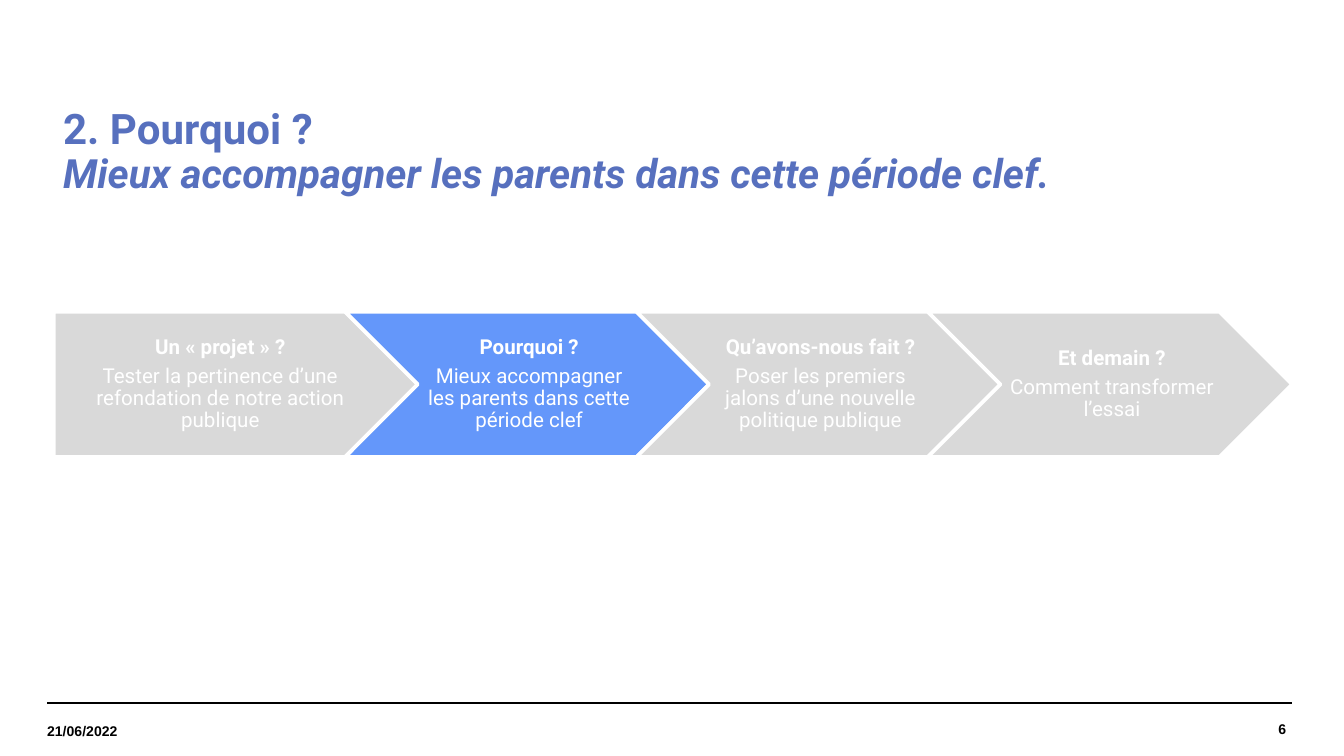
from pptx import Presentation
from pptx.util import Inches, Pt
from pptx.dml.color import RGBColor
from pptx.enum.shapes import MSO_SHAPE, MSO_CONNECTOR
from pptx.enum.text import PP_ALIGN, MSO_ANCHOR
from lxml import etree

PLATE, CHEVRON = MSO_SHAPE.PENTAGON, MSO_SHAPE.CHEVRON
LINE = MSO_CONNECTOR.STRAIGHT
LEFT, MID, RIGHT = PP_ALIGN.LEFT, PP_ALIGN.CENTER, PP_ALIGN.RIGHT
MIDDLE = MSO_ANCHOR.MIDDLE
NS = "{http://schemas.openxmlformats.org/drawingml/2006/main}"

WIDE = 10
HIGH = WIDE * 9 / 16
GREY, BLUE, INDIGO, WHITE, BLACK = "D9D9D9", "6497FA", "5770BE", "FFFFFF", "000000"
TITLE = ("2. Pourquoi ?", "Mieux accompagner les parents dans cette période clef.")
STEPS = [
    ("Un «\u00a0projet\u00a0» ?", "Tester la pertinence d’une refondation de notre action publique"),
    ("Pourquoi ?", "Mieux accompagner les parents dans cette période clef"),
    ("Qu’avons-nous fait ?", "Poser les premiers jalons d’une nouvelle politique publique"),
    ("Et demain ?", "Comment transformer l’essai"),
]
ACTIVE = 1
FOOTER = [("21/06/2022", 0.35, 5.25, 1.28, 0.38, LEFT), ("6", 8.09, 5.23, 1.48, 0.39, RIGHT)]
RULES = (0.35, 0.39)
RULE_Y, RULE_W = 5.23, 9.22
STEP_X, STEP_Y, STEP_W, STEP_H = 0.4, 2.32, 2.71, 1.08
PITCH = STEP_W * 0.8
POINT = STEP_H / 2


def color(code):
    return RGBColor.from_string(code)


def add_run(para, text, size, code, font="Roboto", bold=True, italic=False):
    run = para.add_run()
    run.text = text
    face = run.font
    face.name, face.size, face.bold, face.italic = font, Pt(size), bold, italic
    face.color.rgb = color(code)


def add_box(slide, x, y, w, h, pads):
    box = slide.shapes.add_textbox(*map(Inches, (x, y, w, h)))
    frame = box.text_frame
    frame.word_wrap = True
    frame.vertical_anchor = MIDDLE
    (frame.margin_left, frame.margin_top,
     frame.margin_right, frame.margin_bottom) = map(Inches, pads)
    return frame


def add_step(slide, i, head, body):
    x = STEP_X + i * PITCH
    kind = CHEVRON if i else PLATE
    arrow = slide.shapes.add_shape(kind, *map(Inches, (x, STEP_Y, STEP_W, STEP_H)))
    arrow.shadow.inherit = False
    arrow.adjustments[0] = 0.5
    arrow.fill.solid()
    arrow.fill.fore_color.rgb = color(BLUE if i == ACTIVE else GREY)
    arrow.line.color.rgb = color(WHITE)
    arrow.line.width = Pt(2)
    start = POINT if i else 0
    width = STEP_W - 2 * POINT if i else STEP_W - POINT / 2
    pads = (0.05 if i else 0.06, 0.03, 0.02, 0.03)
    frame = add_box(slide, x + start, STEP_Y, width, STEP_H, pads)
    for para, text, bold in ((frame.paragraphs[0], head, True),
                             (frame.add_paragraph(), body, False)):
        para.alignment = MID
        para.line_spacing = 0.9
        para.space_after = Pt(3.85)
        add_run(para, text, 11, WHITE, bold=bold)


def add_rule(slide, x):
    rule = slide.shapes.add_connector(
        LINE, *map(Inches, (x, RULE_Y, x + RULE_W, RULE_Y)))
    rule.line.color.rgb = color(BLACK)
    rule.line.width = Pt(0.8)
    etree.SubElement(rule._element.spPr, NS + "effectLst")


def main():
    deck = Presentation()
    deck.slide_width, deck.slide_height = Inches(WIDE), Inches(HIGH)
    slide = deck.slides.add_slide(deck.slide_layouts[6])

    for x in RULES:
        add_rule(slide, x)
    for text, x, y, w, h, align in FOOTER:
        para = add_box(slide, x, y, w, h, (0, 0, 0, 0)).paragraphs[0]
        para.alignment = align
        add_run(para, text, 7.5, BLACK, "Arial")

    para = add_box(slide, 0.36, 0.84, 9.21, 0.59, (0.11, 0.05, 0.1, 0.05)).paragraphs[0]
    para.line_spacing = 0.9
    add_run(para, TITLE[0], 22.5, INDIGO)
    para.add_line_break()
    add_run(para, TITLE[1], 21.6, INDIGO, italic=True)

    for i, (head, body) in enumerate(STEPS):
        add_step(slide, i, head, body)
    deck.save("out.pptx")


if __name__ == "__main__":
    main()
